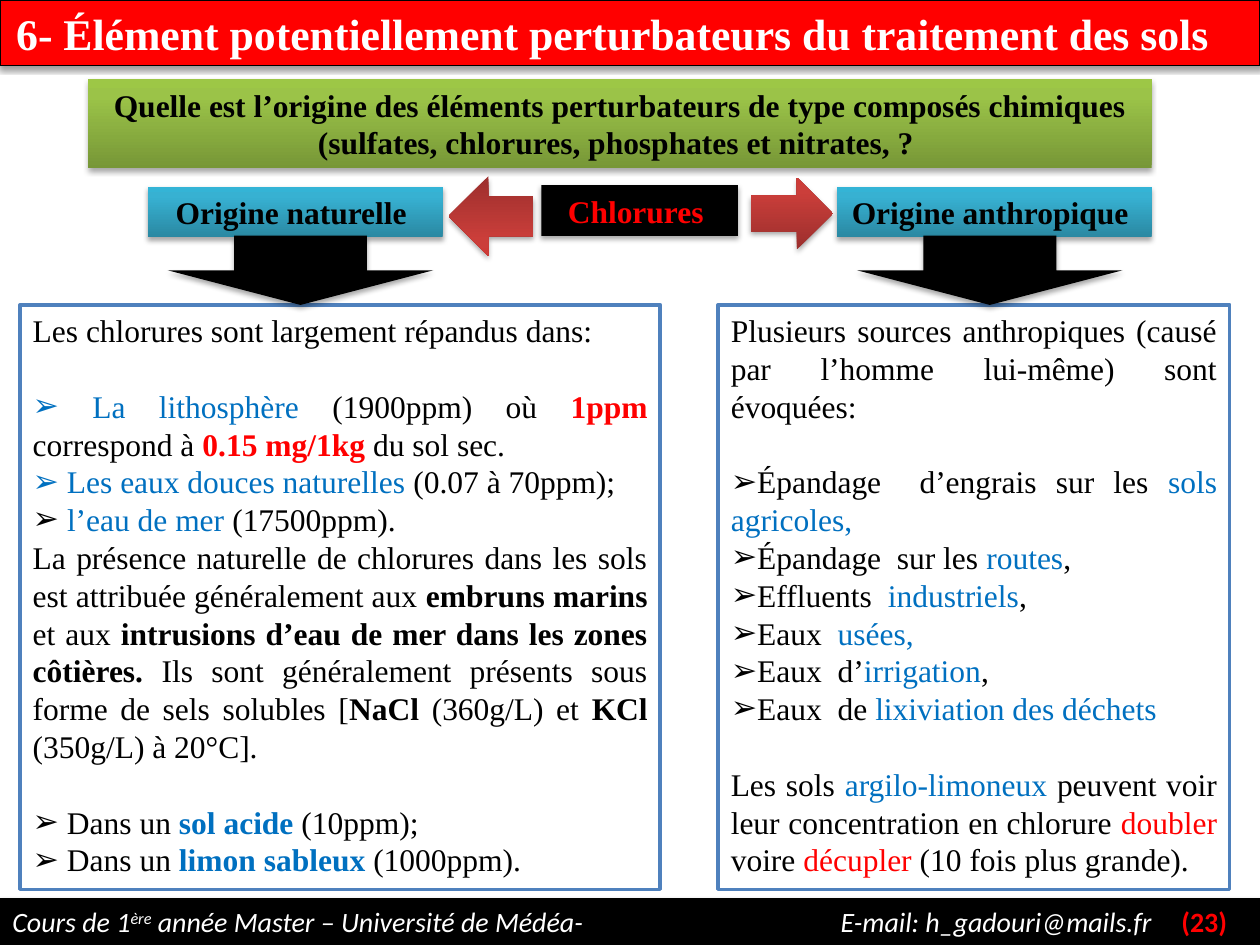
from copy import deepcopy
from dataclasses import dataclass

from lxml.etree import SubElement
from pptx import Presentation
from pptx.dml.color import RGBColor
from pptx.enum.shapes import MSO_SHAPE
from pptx.enum.text import MSO_ANCHOR, MSO_AUTO_SIZE, PP_ALIGN
from pptx.oxml.ns import qn
from pptx.util import Pt


@dataclass(frozen=True)
class Theme:
    serif: str = "Times New Roman"
    sans: str = "Calibri"
    title_size: float = 25
    text_size: float = 18
    footer_size: float = 16
    blank_line: float = 21.6
    black: str = "000000"
    white: str = "FFFFFF"
    red: str = "FF0000"
    blue: str = "0070C0"
    border: str = "4F81BD"
    green_shades: tuple = ("779737", "9BC348", "9DC746")
    cyan_shades: tuple = ("2A88A2", "37B1D2", "34B4D6")
    red_shades: tuple = ("9C2F2D", "CB3E3A", "CE3B37")


THEME = Theme()
PLAIN = {"name": THEME.serif, "size": Pt(THEME.text_size), "bold": False, "color": THEME.black}
BOLD = PLAIN | {"bold": True}
BLUE = PLAIN | {"color": THEME.blue}
RED = PLAIN | {"color": THEME.red}
BLUE_BOLD = BLUE | {"bold": True}
RED_BOLD = RED | {"bold": True}
TITLE = BOLD | {"size": Pt(THEME.title_size), "color": THEME.white}
FOOTER = {"name": THEME.sans, "size": Pt(THEME.footer_size), "italic": True, "color": THEME.white}
PAGE_NUMBER = FOOTER | {"italic": False, "bold": True, "color": THEME.red}

# Each paragraph is (kind, spans); "gap" in the kind leaves one line free above it.
NATURAL = [
    ("text", [("Les chlorures sont largement répandus dans:", PLAIN)]),
    ("gap bullet", [(" La lithosphère ", BLUE), ("(1900ppm) où ", PLAIN), ("1ppm", RED_BOLD),
                    (" correspond à ", PLAIN), ("0.15 mg/1kg ", RED_BOLD), ("du sol sec.", PLAIN)]),
    ("bullet", [(" Les eaux douces naturelles ", BLUE), ("(0.07 à 70ppm);", PLAIN)]),
    ("bullet", [(" ", PLAIN), ("l’eau de mer ", BLUE), ("(17500ppm).", PLAIN)]),
    ("text", [("La présence naturelle de chlorures dans les sols est attribuée généralement aux ", PLAIN),
              ("embruns marins", BOLD), (" et aux ", PLAIN),
              ("intrusions d’eau de mer dans les zones côtières. ", BOLD),
              ("Ils sont généralement présents sous forme de sels solubles [", PLAIN),
              ("NaCl", BOLD), (" (360g/L) et ", PLAIN), ("KCl ", BOLD), ("(350g/L) à 20°C].", PLAIN)]),
    ("gap bullet", [(" Dans un ", PLAIN), ("sol acide ", BLUE_BOLD), ("(10ppm);", PLAIN)]),
    ("bullet", [(" Dans un ", PLAIN), ("limon sableux ", BLUE_BOLD), ("(1000ppm).", PLAIN)]),
]
HUMAN = [
    ("text", [("Plusieurs sources anthropiques (causé par l’homme lui-même) sont évoquées:", PLAIN)]),
    ("gap bullet", [("Épandage  d’engrais sur les ", PLAIN), ("sols agricoles,", BLUE)]),
    ("bullet", [("Épandage  sur les ", PLAIN), ("routes", BLUE), (",", PLAIN)]),
    ("bullet", [("Effluents  ", PLAIN), ("industriels", BLUE), (",", PLAIN)]),
    ("bullet", [("Eaux  ", PLAIN), ("usées,", BLUE)]),
    ("bullet", [("Eaux  d’", PLAIN), ("irrigation", BLUE), (",", PLAIN)]),
    ("bullet", [("Eaux  de ", PLAIN), ("lixiviation des déchets", BLUE)]),
    ("gap text", [("Les sols ", PLAIN), ("argilo-limoneux ", BLUE),
                  ("peuvent voir leur concentration en chlorure ", PLAIN), ("doubler", RED),
                  (" voire", PLAIN), (" décupler ", RED), ("(10 fois plus grande).", PLAIN)]),
]


def place(shape, bounds):
    for name, value in zip(("left", "top", "width", "height"), bounds):
        setattr(shape, name, Pt(value))


def paint(shape, fill, line=None, line_width=0.75):
    """Fill with one colour or a bottom-to-top series of shades."""
    if isinstance(fill, str):
        shape.fill.solid()
        shape.fill.fore_color.rgb = RGBColor.from_string(fill)
    else:
        shape.fill.gradient()
        shape.fill.gradient_angle = 90
        stop_list = shape.element.spPr.find(".//" + qn("a:gsLst"))
        stop_list.append(deepcopy(stop_list[-1]))
        for stop, position, shade in zip(shape.fill.gradient_stops, (0, 0.8, 1), fill):
            stop.position = position
            stop.color.rgb = RGBColor.from_string(shade)
    if line:
        shape.line.color.rgb = RGBColor.from_string(line)
        shape.line.width = Pt(line_width)
    else:
        shape.line.fill.background()


def cast_shadow(shape, distance=1.8, opacity=35):
    shape.shadow.inherit = False
    effects = shape.element.spPr.find(qn("a:effectLst"))
    shadow = SubElement(effects, qn("a:outerShdw"), blurRad=str(Pt(3.1)), dist=str(Pt(distance)),
                        dir="5400000", rotWithShape="0")
    color = SubElement(shadow, qn("a:srgbClr"), val=THEME.black)
    SubElement(color, qn("a:alpha"), val=str(opacity * 1000))


def set_frame(shape, anchor=MSO_ANCHOR.MIDDLE, **margins):
    frame = shape.text_frame
    settings = {"word_wrap": True, "auto_size": MSO_AUTO_SIZE.NONE, "vertical_anchor": anchor,
                "margin_left": Pt(7.2), "margin_right": Pt(7.2),
                "margin_top": Pt(3.6), "margin_bottom": Pt(3.6)} | margins
    for name, value in settings.items():
        setattr(frame, name, value)
    return frame


def add_span(para, text, style):
    span = para.add_run()
    span.text = text
    for name, value in style.items():
        if name == "color":
            span.font.color.rgb = RGBColor.from_string(value)
        else:
            setattr(span.font, name, value)
    return span


def write_label(shape, text, style, **margins):
    para = set_frame(shape, **margins).paragraphs[0]
    para.alignment = PP_ALIGN.CENTER
    add_span(para, text, style)


def add_block(page, bounds, fill, kind=MSO_SHAPE.RECTANGLE, rotation=0):
    block = page.shapes.add_shape(kind, *map(Pt, bounds))
    block.rotation = rotation
    paint(block, fill)
    cast_shadow(block)
    return block


def fill_column(box, bounds, paragraphs):
    place(box, bounds)
    paint(box, THEME.white, THEME.border, 2)
    frame = set_frame(box, MSO_ANCHOR.TOP)
    for index, (kind, spans) in enumerate(paragraphs):
        para = frame.add_paragraph() if index else frame.paragraphs[0]
        para.alignment = PP_ALIGN.JUSTIFY
        para.space_before = Pt(THEME.blank_line if "gap" in kind else 0)
        properties = para._p.get_or_add_pPr()
        properties.set("marL", "0")
        properties.set("indent", "0")
        if "bullet" in kind:
            SubElement(properties, qn("a:buChar"), char="➢")
        else:
            SubElement(properties, qn("a:buNone"))
        for text, style in spans:
            add_span(para, text, style)


def add_footer(page):
    bar = add_block(page, (0, 513.4, 720, 26.6), THEME.black)
    paint(bar, THEME.black, THEME.black)
    cast_shadow_settings = bar.element.spPr.find(qn("a:effectLst"))
    cast_shadow_settings.clear()
    cast_shadow(bar, 1.6, 38)
    para = set_frame(bar).paragraphs[0]
    para.alignment = PP_ALIGN.LEFT
    tabs = SubElement(para._p.get_or_add_pPr(), qn("a:tabLst"))
    for position in (473.3, 668):
        SubElement(tabs, qn("a:tab"), pos=str(Pt(position)), algn="l")
    add_span(para, "Cours de 1", FOOTER)
    ordinal = add_span(para, "ère", FOOTER)
    ordinal.font._element.set("baseline", "30000")
    add_span(para, " année Master – Université de Médéa-\tE-mail: h_gadouri@mails.fr\t", FOOTER)
    add_span(para, "(23)", PAGE_NUMBER)


def main():
    deck = Presentation()
    deck.slide_width, deck.slide_height = Pt(720), Pt(540)
    page = deck.slides.add_slide(deck.slide_layouts.get_by_name("Two Content"))
    title, natural_box, human_box = page.placeholders

    place(title, (0, 0, 720, 37.4))
    paint(title, THEME.red, THEME.black)
    cast_shadow(title, 1.6, 38)
    write_label(title, "6- Élément potentiellement perturbateurs du traitement des sols", TITLE,
                margin_left=Pt(4), margin_right=Pt(24))
    fill_column(natural_box, (11.5, 174.2, 365.8, 334), NATURAL)
    fill_column(human_box, (410.4, 174.2, 292.3, 334), HUMAN)

    question = ("Quelle est l’origine des éléments perturbateurs de type composés chimiques "
                "(sulfates, chlorures, phosphates et nitrates, ? ")
    for text, bounds, fill, style in (
        (question, (50.4, 44.9, 607.7, 51.1), THEME.green_shades, BOLD),
        ("Chlorures ", (309.4, 105.8, 112.3, 29), THEME.black, RED_BOLD),
        ("Origine naturelle ", (84.5, 106.6, 168.5, 29), THEME.cyan_shades, BOLD),
        ("Origine anthropique ", (478.1, 106.6, 180, 29), THEME.cyan_shades, BOLD),
    ):
        write_label(add_block(page, bounds, fill), text, style)

    for bounds, fill, rotation in (
        ((256.3, 100.8, 48.2, 45.4), THEME.red_shades, 180),
        ((429.1, 101.5, 46.8, 41), THEME.red_shades, 0),
        ((151.9, 78.5, 39.6, 151.9), THEME.black, 90),
        ((545.8, 78.5, 39.6, 151.9), THEME.black, 90),
    ):
        add_block(page, bounds, fill, MSO_SHAPE.RIGHT_ARROW, rotation)
    add_footer(page)
    deck.save("out.pptx")


if __name__ == "__main__":
    main()
